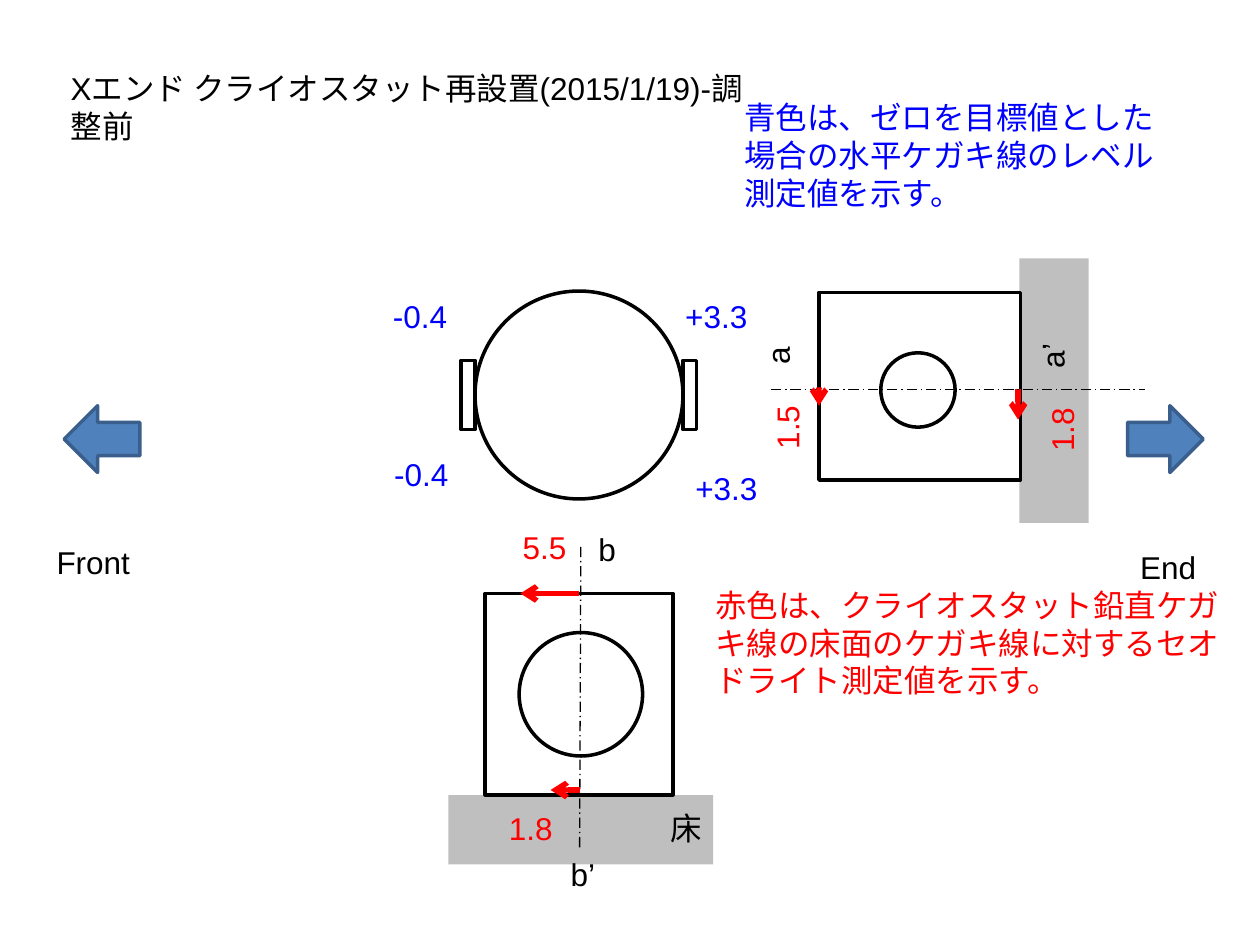
from dataclasses import dataclass

from lxml.etree import SubElement
from pptx import Presentation
from pptx.dml.color import RGBColor as Rgb
from pptx.enum.dml import MSO_LINE_DASH_STYLE as Dash
from pptx.enum.shapes import MSO_CONNECTOR_TYPE as Link, MSO_SHAPE as Preset
from pptx.enum.text import MSO_ANCHOR as Anchor, MSO_AUTO_SIZE as Fit, PP_ALIGN as Align
from pptx.oxml.ns import qn
from pptx.util import Inches, Pt


@dataclass(frozen=True)
class Theme:
    """Colours, font and sizes of the slide."""
    ink: str = "000000"
    level: str = "0000FF"
    theodolite: str = "FF0000"
    wall: str = "BFBFBF"
    direction: str = "4F81BD"
    direction_edge: str = "3A5F8C"
    font: str = "Arial"
    size: float = 18
    outline: float = 2
    axis: float = 0.75
    offset: float = 3


class SurveySlide:
    """Draws the elements of the survey on one slide."""

    def __init__(self, page, theme):
        self.page, self.theme = page, theme

    def fill_text(self, box, text, color, **layout):
        frame = box.text_frame
        for name, value in layout.items():
            setattr(frame, name, value)
        para = frame.paragraphs[0]
        para.alignment = Align.LEFT
        span = para.add_run()
        span.text = text
        values = {"name": self.theme.font, "size": Pt(self.theme.size), "bold": False}
        for name, value in values.items():
            setattr(span.font, name, value)
        span.font.color.rgb = Rgb.from_string(color)

    def title(self, text, left, top, width, height):
        box = self.page.shapes.title
        places = {"left": left, "top": top, "width": width, "height": height}
        for name, value in places.items():
            setattr(box, name, Inches(value))
        self.fill_text(box, text, self.theme.ink, word_wrap=True,
                       auto_size=Fit.NONE, vertical_anchor=Anchor.TOP)

    def text(self, text, color, left, top, width, height=0.4, wrap=False, rotation=0):
        box = self.page.shapes.add_textbox(*map(Inches, (left, top, width, height)))
        box.rotation = rotation
        self.fill_text(box, text, color, word_wrap=wrap, auto_size=Fit.SHAPE_TO_FIT_TEXT)

    def shape(self, preset, left, top, width, height, fill=None, edge=None, parent=None):
        shapes = (parent or self.page).shapes
        shape = shapes.add_shape(preset, *map(Inches, (left, top, width, height)))
        shape.shadow.inherit = False
        if fill:
            shape.fill.solid()
            shape.fill.fore_color.rgb = Rgb.from_string(fill)
        else:
            shape.fill.background()
        if edge:
            shape.line.color.rgb = Rgb.from_string(edge)
            shape.line.width = Pt(self.theme.outline)
        else:
            shape.line.fill.background()
        return shape

    def line(self, start, end, color, width):
        line = self.page.shapes.add_connector(Link.STRAIGHT, *map(Inches, (*start, *end)))
        line.line.color.rgb = Rgb.from_string(color)
        line.line.width = Pt(width)
        SubElement(line._element.spPr, qn("a:effectLst"))
        return line

    def axis(self, start, end):
        line = self.line(start, end, self.theme.ink, self.theme.axis)
        line.line.dash_style = Dash.LONG_DASH_DOT

    def arrow(self, start, end):
        line = self.line(start, end, self.theme.theodolite, self.theme.offset)
        outline = line._element.spPr.find(qn("a:ln"))
        SubElement(outline, qn("a:tailEnd"), type="arrow")
        return line


def main():
    """Build and save the slide."""
    deck = Presentation()
    deck.slide_width, deck.slide_height = Inches(10), Inches(7.5)
    theme = Theme()
    survey = SurveySlide(deck.slides.add_slide(deck.slide_layouts[5]), theme)
    ink, blue, red = theme.ink, theme.level, theme.theodolite

    survey.title("Xエンド クライオスタット再設置(2015/1/19)-調整前", 0.46, 0.5, 5.57, 0.4)
    survey.shape(Preset.RECTANGLE, 3.56, 6.31, 2.1, 0.55, fill=theme.wall)
    survey.shape(Preset.RECTANGLE, 8.09, 2.05, 0.55, 2.1, fill=theme.wall)

    cryostat = survey.page.shapes.add_group_shape()
    survey.shape(Preset.OVAL, 3.77, 2.31, 1.65, 1.65, edge=ink, parent=cryostat)
    for left in (3.66, 5.42):
        survey.shape(Preset.RECTANGLE, left, 2.86, 0.11, 0.55, edge=ink, parent=cryostat)

    for preset, left in ((Preset.RIGHT_ARROW, 8.95), (Preset.LEFT_ARROW, 0.51)):
        survey.shape(preset, left, 3.22, 0.6, 0.53,
                     fill=theme.direction, edge=theme.direction_edge)

    front_view = survey.shape(Preset.RECTANGLE, 3.85, 4.71, 1.49, 1.6, edge=ink)
    survey.axis((4.61, 4.34), (4.6, 6.74))
    top_offset = survey.arrow((4.6, 4.71), (4.13, 4.71))
    top_offset.begin_connect(front_view, 0)
    survey.arrow((4.6, 6.27), (4.37, 6.27))

    survey.shape(Preset.RECTANGLE, 6.5, 2.32, 1.6, 1.49, edge=ink)
    survey.arrow((8.08, 3.09), (8.08, 3.33))
    survey.axis((6.12, 3.09), (9.09, 3.09))
    survey.arrow((6.5, 3.08), (6.5, 3.22))

    for left, top, size in ((4.12, 5.02, 0.98), (6.99, 2.8, 0.59)):
        survey.shape(Preset.OVAL, left, top, size, size, edge=ink)

    labels = (
        ("End", ink, 8.95, 4.3, 0.65),
        ("Front", ink, 0.35, 4.26, 0.79),
        ("+3.3", blue, 5.34, 2.31, 0.7),
        ("+3.3", blue, 5.42, 3.67, 0.7),
        ("-0.4", blue, 3.02, 2.31, 0.64),
        ("-0.4", blue, 3.03, 3.56, 0.64),
        ("5.5", red, 4.05, 4.14, 0.55),
        ("1.8", red, 3.94, 6.37, 0.55),
        ("b", ink, 4.65, 4.16, 0.34),
        ("b’", ink, 4.43, 6.74, 0.4),
        ("床", ink, 5.22, 6.37, 0.45),
    )
    for label in labels:
        survey.text(*label)

    upright_labels = (
        ("1.5", red, 5.97, 3.19, 0.55),
        ("1.8", red, 8.15, 3.21, 0.55),
        ("a’", ink, 8.15, 2.62, 0.4),
        ("a", ink, 6, 2.62, 0.34),
    )
    for label in upright_labels:
        survey.text(*label, rotation=270)

    survey.text("青色は、ゼロを目標値とした場合の水平ケガキ線のレベル測定値を示す。",
                blue, 5.81, 0.73, 3.62, 1.01, wrap=True)
    survey.text("赤色は、クライオスタット鉛直ケガキ線の床面のケガキ線に対するセオドライト測定値を示す。",
                red, 5.58, 4.6, 4.23, 1.01, wrap=True)
    deck.save("out.pptx")


if __name__ == "__main__":
    main()
